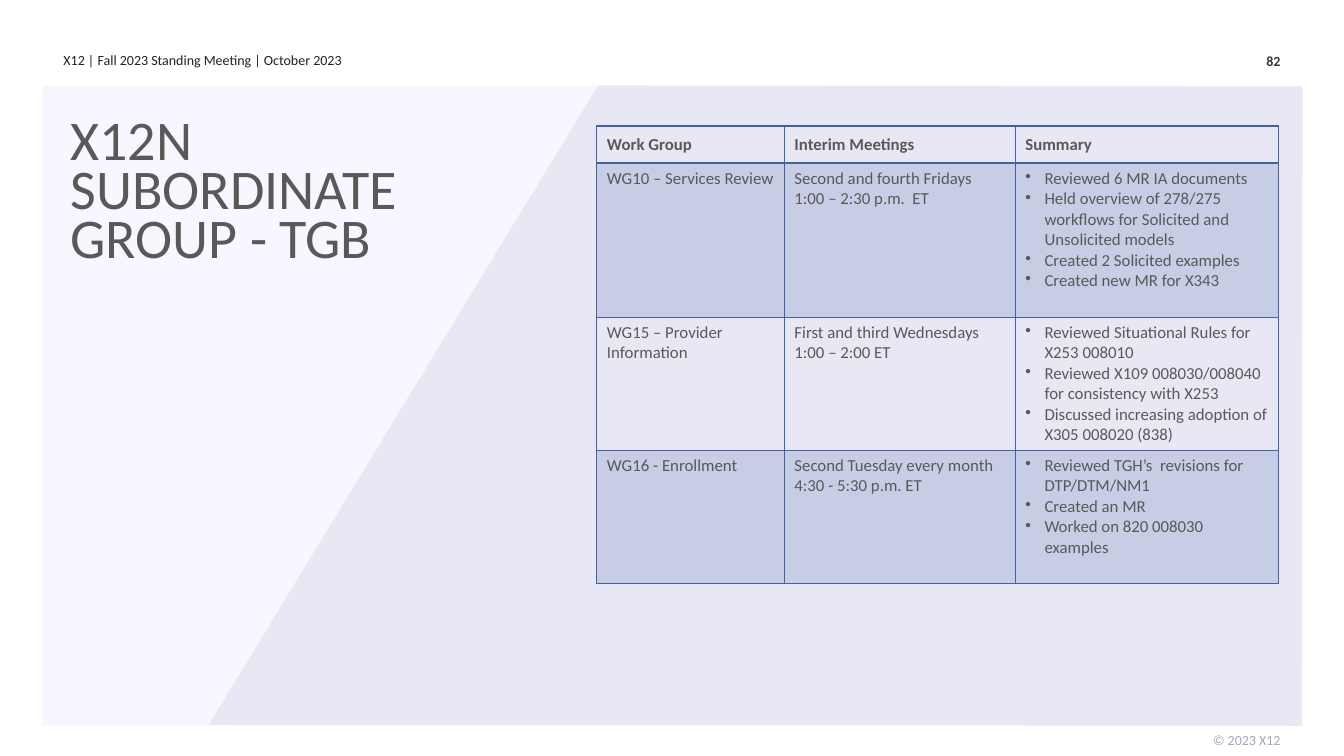
"""Build the X12N subordinate group slide with its table of work groups."""
from dataclasses import dataclass

from lxml.etree import SubElement
from pptx import Presentation
from pptx.dml.color import RGBColor
from pptx.enum.shapes import MSO_SHAPE as Shape
from pptx.enum.text import MSO_ANCHOR as Anchor, PP_ALIGN as Align
from pptx.oxml.ns import qn
from pptx.util import Inches, Pt


@dataclass(frozen=True)
class Theme:
    """Colours, font and type sizes of the slide."""
    font: str = "Calibri"
    panel: str = "F7F7FF"
    slope: str = "E8E8F5"
    heading: str = "21212B"
    number: str = "363640"
    credit: str = "A6A6BA"
    body: str = "595959"
    accent: str = "4361A3"
    band_alpha: int = 20
    title_size: int = 40
    title_line: int = 35
    table_size: int = 12
    small_size: int = 10


THEME = Theme()
PANEL = (0.42, 0.85, 12.5, 6.35)
SLOPE = [(2.07, 7.19), (5.93, 0.85), (12.92, 0.86), (12.91, 7.2)]
TABLE_LEFT, TABLE_TOP = 5.92, 1.25
COLUMN_WIDTHS = [1.86, 2.29, 2.61]
ROW_HEIGHTS = [0.37, 1.53, 1.32, 1.32]
BULLET_INDENT = 0.19
HEADINGS = ["Work Group", "Interim Meetings", "Summary"]
WORK_GROUPS = [
    (["WG10 – Services Review"],
     ["Second and fourth Fridays", "1:00 – 2:30 p.m.  ET"],
     ["Reviewed 6 MR IA documents",
      "Held overview of 278/275 workflows for Solicited and Unsolicited models",
      "Created 2 Solicited examples",
      "Created new MR for X343"]),
    (["WG15 – Provider Information"],
     ["First and third Wednesdays", "1:00 – 2:00 ET"],
     ["Reviewed Situational Rules for X253 008010",
      "Reviewed X109 008030/008040 for consistency with X253",
      "Discussed increasing adoption of X305 008020 (838)"]),
    (["WG16 - Enrollment"],
     ["Second Tuesday every month", "4:30 - 5:30 p.m. ET"],
     ["Reviewed TGH’s  revisions for DTP/DTM/NM1",
      "Created an MR",
      "Worked on 820 008030 examples"]),
]


def add_bullet(para):
    """Give a paragraph a hanging bullet."""
    properties = para._p.get_or_add_pPr()
    properties.set("marL", str(Inches(BULLET_INDENT)))
    properties.set("indent", str(-Inches(BULLET_INDENT)))
    SubElement(properties, qn("a:buChar"), char="•")


def write_para(para, text, size, color, bold=False, align=Align.LEFT,
               line=None, bullet=False):
    """Write one formatted paragraph."""
    if bullet:
        add_bullet(para)
    para.alignment = align
    if line:
        para.line_spacing = line
    span = para.add_run()
    span.text = text
    span.font.name = THEME.font
    span.font.size = Pt(size)
    span.font.bold = bold
    span.font.color.rgb = RGBColor.from_string(color)


def add_text(page, bounds, text, **style):
    """Add a text box without insets."""
    box = page.shapes.add_textbox(*map(Inches, bounds))
    frame = box.text_frame
    frame.word_wrap = True
    frame.margin_left = frame.margin_right = 0
    frame.margin_top = frame.margin_bottom = 0
    write_para(frame.paragraphs[0], text, **style)


def paint(shape, color):
    """Fill a shape flatly, without line or shadow."""
    shape.shadow.inherit = False
    shape.fill.solid()
    shape.fill.fore_color.rgb = RGBColor.from_string(color)
    shape.line.fill.background()


def add_background(page):
    """Draw the pale panel and the sloped area over it."""
    paint(page.shapes.add_shape(Shape.RECTANGLE, *map(Inches, PANEL)), THEME.panel)
    start, *corners = [(Inches(x), Inches(y)) for x, y in SLOPE]
    builder = page.shapes.build_freeform(*start)
    builder.add_line_segments(corners, close=True)
    paint(builder.convert_to_shape(), THEME.slope)


def set_borders(cell, **widths):
    """Draw the cell's sides, each with its width in points."""
    properties = cell._tc.get_or_add_tcPr()
    for side, width in widths.items():
        line = SubElement(properties, qn(f"a:ln{side}"), w=str(Pt(width)))
        fill = SubElement(line, qn("a:solidFill"))
        SubElement(fill, qn("a:srgbClr"), val=THEME.accent)


def set_band(cell, banded):
    """Tint a banded cell and leave any other one clear."""
    if not banded:
        cell.fill.background()
        return
    cell.fill.solid()
    cell.fill.fore_color.rgb = RGBColor.from_string(THEME.accent)
    color = cell._tc.tcPr.find(f".//{qn('a:solidFill')}[last()]")
    color = cell._tc.tcPr.find(qn("a:solidFill")).find(qn("a:srgbClr"))
    SubElement(color, qn("a:alpha"), val=str(THEME.band_alpha * 1000))


def fill_cell(cell, lines, top=1, bottom=1, banded=False, **style):
    """Write a cell's lines and set its borders and fill."""
    set_borders(cell, L=1, R=1, T=top, B=bottom)
    set_band(cell, banded)
    frame = cell.text_frame
    for index, text in enumerate(lines):
        para = frame.add_paragraph() if index else frame.paragraphs[0]
        write_para(para, text, THEME.table_size, THEME.body, **style)


def add_work_groups(page):
    """Add the table of work groups, meetings and summaries."""
    table = page.shapes.add_table(
        len(ROW_HEIGHTS), len(COLUMN_WIDTHS), Inches(TABLE_LEFT), Inches(TABLE_TOP),
        Inches(sum(COLUMN_WIDTHS)), Inches(sum(ROW_HEIGHTS))).table
    table.first_row = table.horz_banding = False
    for column, width in zip(table.columns, COLUMN_WIDTHS):
        column.width = Inches(width)
    for row, height in zip(table.rows, ROW_HEIGHTS):
        row.height = Inches(height)
    for column, heading in enumerate(HEADINGS):
        cell = table.cell(0, column)
        cell.vertical_anchor = Anchor.MIDDLE
        fill_cell(cell, [heading], bottom=2, bold=True, line=0.95)
    for row, group in enumerate(WORK_GROUPS, start=1):
        for column, lines in enumerate(group):
            fill_cell(table.cell(row, column), lines, top=2 if row == 1 else 1,
                      banded=row % 2 == 1, bullet=HEADINGS[column] == "Summary")


def main():
    """Build and save the deck."""
    deck = Presentation()
    deck.slide_width, deck.slide_height = Inches(13.33), Inches(7.5)
    page = deck.slides.add_slide(deck.slide_layouts[6])
    add_background(page)
    add_text(page, (0.63, 0.51, 4.5, 0.25),
             "X12 | Fall 2023 Standing Meeting | October 2023",
             size=THEME.small_size, color=THEME.heading)
    add_text(page, (11.19, 0.52, 1.51, 0.25), "82", size=THEME.small_size,
             color=THEME.number, bold=True, align=Align.RIGHT)
    add_text(page, (11.19, 7.26, 1.51, 0.25), "© 2023 X12", size=THEME.small_size,
             color=THEME.credit, align=Align.RIGHT)
    add_text(page, (0.7, 1.22, 3.69, 1.9), "X12N SUBORDINATE GROUP - TGB",
             size=THEME.title_size, color=THEME.body, line=Pt(THEME.title_line))
    add_work_groups(page)
    deck.save("out.pptx")


if __name__ == "__main__":
    main()
